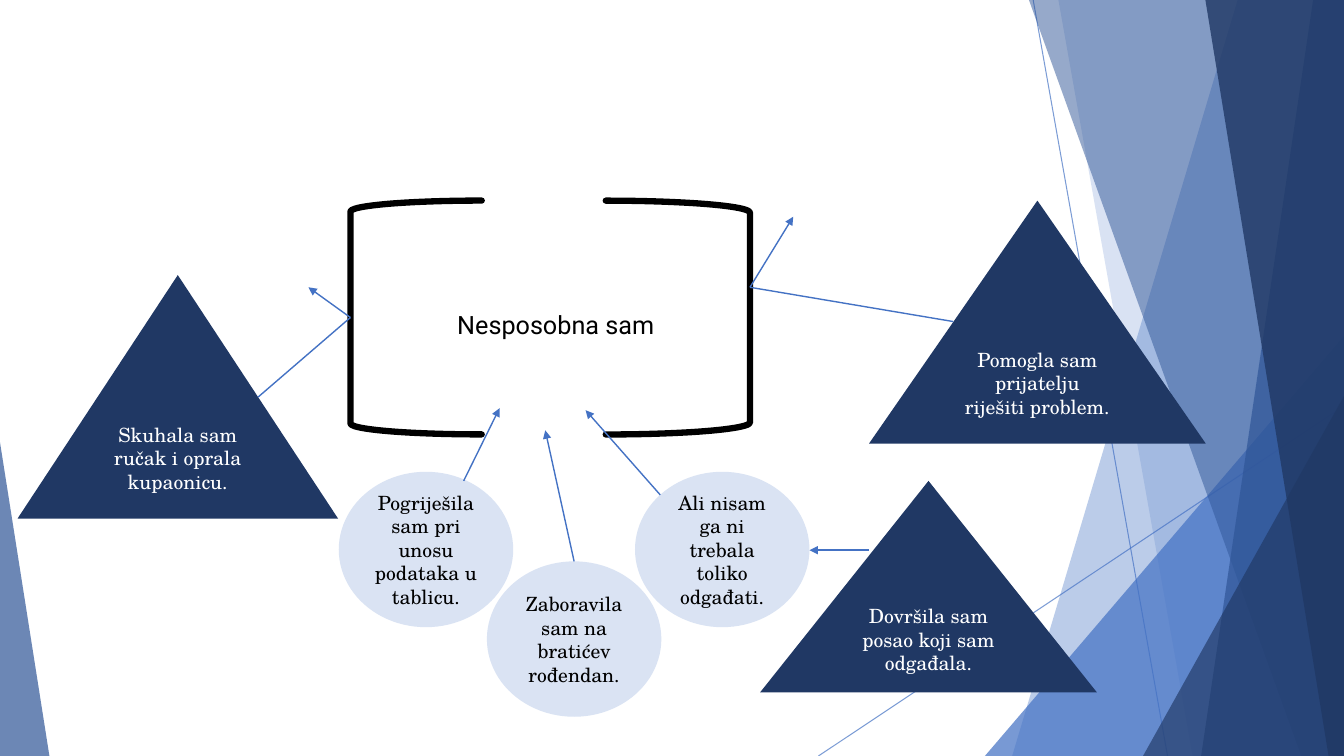
from pptx import Presentation
from pptx.dml.color import RGBColor
from pptx.enum.shapes import MSO_CONNECTOR, MSO_SHAPE
from pptx.enum.text import MSO_ANCHOR, PP_ALIGN
from pptx.oxml.ns import qn
from pptx.oxml.xmlchemy import OxmlElement
from pptx.util import Pt

BLUE = RGBColor(0x44, 0x72, 0xC4)
DEEP_BLUE = RGBColor(0x2F, 0x55, 0x97)
NAVY = RGBColor(0x20, 0x38, 0x64)
PALE = RGBColor(0xDA, 0xE3, 0xF3)
BLACK = RGBColor(0, 0, 0)
WHITE = RGBColor(0xFF, 0xFF, 0xFF)

WIDTH, HEIGHT = 960, 540
SERIF, SANS = "TeX Gyre Schola", "Roboto"


def fade(shape, percent):
    """Set the opacity of the shape's fill or line colour."""
    alpha = OxmlElement("a:alpha")
    alpha.set("val", str(percent * 1000))
    shape._element.spPr.find(".//" + qn("a:srgbClr")).append(alpha)


class Painter:
    def __init__(self, page):
        self.shapes = page.shapes
        self.body = {"name": SERIF, "size": Pt(14)}
        self.heading = {"name": SANS, "size": Pt(18)}

    def paint(self, shape, color, opacity=100):
        shape.shadow.inherit = False
        shape.fill.solid()
        shape.fill.fore_color.rgb = color
        shape.line.fill.background()
        if opacity < 100:
            fade(shape, opacity)

    def add_text(self, shape, text, style, color):
        shape.text_frame.word_wrap = True
        para = shape.text_frame.paragraphs[0]
        para.alignment = PP_ALIGN.CENTER
        span = para.add_run()
        span.text = text
        for name, value in style.items():
            setattr(span.font, name, value)
        span.font.color.rgb = color

    def figure(self, kind, bounds, color, opacity=100):
        shape = self.shapes.add_shape(kind, *map(Pt, bounds))
        self.paint(shape, color, opacity)
        return shape

    def facet(self, top, bottom, color, opacity):
        """Draw a band from a slanted left edge to the right slide edge."""
        builder = self.shapes.build_freeform(Pt(top), 0)
        corners = [(WIDTH, 0), (WIDTH, HEIGHT), (bottom, HEIGHT)]
        builder.add_line_segments([(Pt(x), Pt(y)) for x, y in corners])
        self.paint(builder.convert_to_shape(), color, opacity)

    def corner(self, bounds, apex, color, opacity):
        """Draw a right-angled triangle, apex 0 at left and 1 at right."""
        shape = self.figure(MSO_SHAPE.ISOSCELES_TRIANGLE, bounds, color, opacity)
        shape.adjustments[0] = apex

    def bracket(self, bounds, rotation=0):
        shape = self.shapes.add_shape(MSO_SHAPE.LEFT_BRACKET, *map(Pt, bounds))
        shape.shadow.inherit = False
        shape.fill.background()
        shape.rotation = rotation
        shape.line.color.rgb = BLACK
        shape.line.width = Pt(4.5)
        shape.line._get_or_add_ln().set("cap", "rnd")
        return shape

    def note(self, kind, bounds, text, fill, color):
        shape = self.figure(kind, bounds, fill)
        shape.text_frame.vertical_anchor = MSO_ANCHOR.MIDDLE
        self.add_text(shape, text, self.body, color)
        return shape

    def title(self, bounds, text):
        box = self.shapes.add_textbox(*map(Pt, bounds))
        self.add_text(box, text, self.heading, BLACK)

    def line(self, start, end, width=1, arrow=False):
        link = self.shapes.add_connector(MSO_CONNECTOR.STRAIGHT, *map(Pt, start + end))
        link.line.color.rgb = BLUE
        link.line.width = Pt(width)
        if arrow:
            tail = OxmlElement("a:tailEnd")
            tail.set("type", "triangle")
            link.line._get_or_add_ln().append(tail)
        link._element.spPr.append(OxmlElement("a:effectLst"))
        return link


def draw_backdrop(painter):
    for start, end in [((738, 0), (834, HEIGHT)), ((WIDTH, 290), (584.6, HEIGHT))]:
        fade(painter.line(start, end, width=0.75), 70)
    painter.facet(884, 723, BLUE, 36)
    painter.facet(756, 852, BLUE, 20)
    painter.corner((703.5, 240, 256.5, 300), 1, BLUE, 72)
    painter.facet(735, 929.5, DEEP_BLUE, 50)
    painter.facet(938, 858, DEEP_BLUE, 70)
    painter.facet(861, 949, NAVY, 80)
    painter.corner((816.5, 283, 143.5, 257), 1, NAVY, 66)
    painter.corner((0, 316, 35.3, 224), 0, DEEP_BLUE, 70)


def draw_thoughts(painter):
    left_bracket = painter.bracket((250.3, 143.3, 93.8, 167))
    painter.bracket((432.7, 143.3, 103, 167), rotation=180)
    painter.title((281, 217.4, 232, 29), "Nesposobna sam")

    mistakes = [
        (242, 337, "Pogriješila sam pri unosu podataka u tablicu."),
        (347.8, 401, "Zaboravila sam na bratićev rođendan."),
        (453.6, 337, "Ali nisam ga ni trebala toliko odgađati."),
    ]
    circles = [
        painter.note(MSO_SHAPE.FLOWCHART_CONNECTOR, (x, y, 124.6, 111), text, PALE, BLACK)
        for x, y, text in mistakes
    ]
    successes = [
        ((12.5, 196.5, 229, 174), "Skuhala sam ručak i oprala kupaonicu."),
        ((620.8, 143.3, 240.5, 173.5), "Pomogla sam prijatelju riješiti problem."),
        ((543, 343.5, 240.5, 151), "Dovršila sam posao koji sam odgađala."),
    ]
    for bounds, text in successes:
        painter.note(MSO_SHAPE.ISOSCELES_TRIANGLE, bounds, text, NAVY, WHITE)

    left_hit, right_hit = (250.3, 226.8), (535.7, 205.2)
    birthday = painter.line((410.1, 401), (389.5, 307.4), arrow=True)
    birthday.begin_connect(circles[1], 0)
    deflected = painter.line(left_hit, (220.3, 205.2), arrow=True)
    deflected.begin_connect(left_bracket, 1)
    incoming = painter.line((184.3, 283.7), left_hit)
    incoming.end_connect(left_bracket, 1)
    painter.line((681, 229.7), right_hit)
    for start, end in [
        ((331.2, 343.5), (356.8, 291.6)),
        ((471.6, 353.5), (418.3, 293)),
        ((620.8, 393), (578.2, 393)),
        (right_hit, (566.6, 154.8)),
    ]:
        painter.line(start, end, arrow=True)


def main():
    deck = Presentation()
    deck.slide_width, deck.slide_height = Pt(WIDTH), Pt(HEIGHT)
    painter = Painter(deck.slides.add_slide(deck.slide_layouts[6]))
    draw_backdrop(painter)
    draw_thoughts(painter)
    deck.save("out.pptx")


if __name__ == "__main__":
    main()
